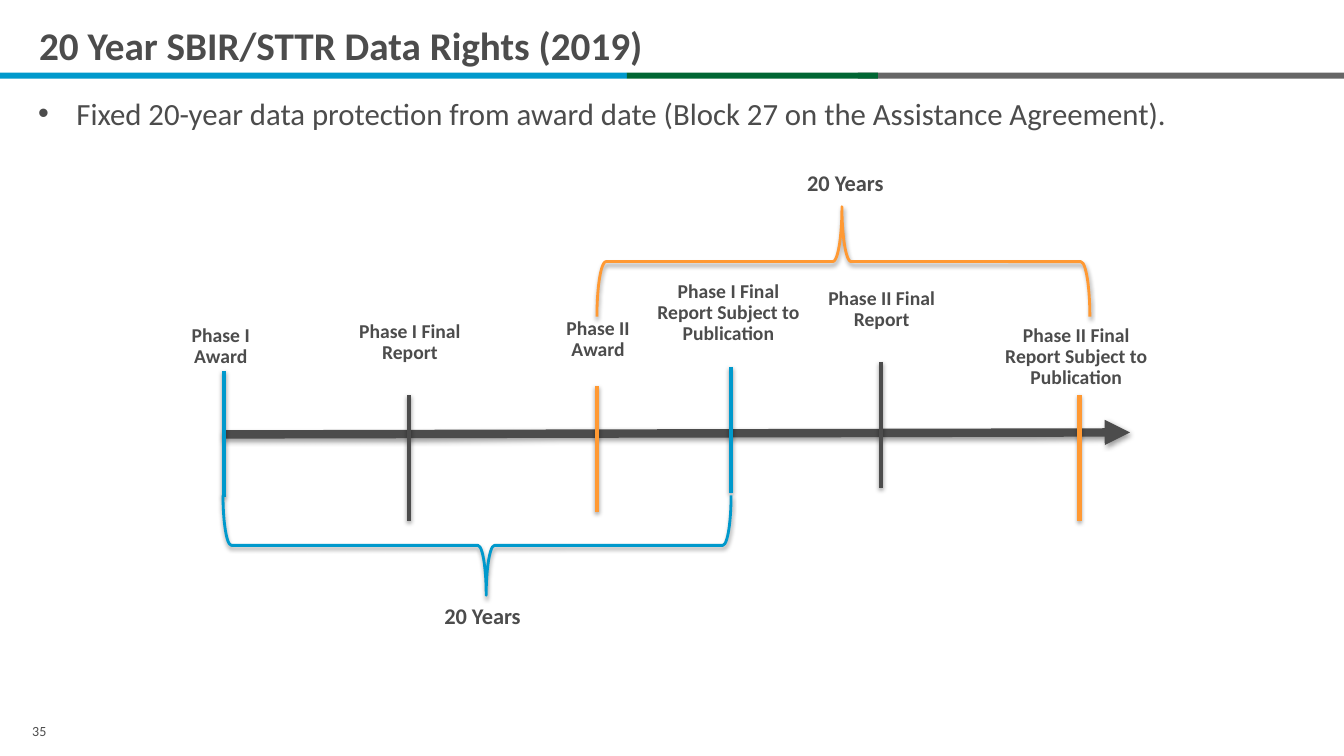
from lxml.etree import SubElement
from pptx import Presentation
from pptx.dml.color import RGBColor
from pptx.enum.shapes import MSO_CONNECTOR, MSO_SHAPE
from pptx.enum.text import MSO_ANCHOR, PP_ALIGN
from pptx.oxml import parse_xml
from pptx.oxml.ns import nsdecls, qn
from pptx.util import Inches, Pt

SLIDE_WIDTH, SLIDE_HEIGHT = Inches(13.33), Inches(7.5)
COLUMNS, ROWS = 40, 30
FONT = "Calibri"
BLUE = RGBColor(0x00, 0x99, 0xCC)
GREEN = RGBColor(0x00, 0x66, 0x33)
GRAY = RGBColor(0x66, 0x66, 0x66)
DARK = RGBColor(0x4C, 0x4C, 0x4C)
ORANGE = RGBColor(0xFF, 0x99, 0x33)

BANDS = [(0, 18.66, BLUE), (25.53, 14.47, GRAY), (18.66, 7.47, GREEN)]
BAND_TOP, BAND_HEIGHT = 2.88, 0.24
TICK_HEIGHT = 5
MILESTONES = [
    ("Phase I Award", 6.66, 14.72, BLUE, 6.57, 12.72, 2.82, 2.12),
    ("Phase I Final Report", 12.18, 15.68, DARK, 12.2, 12.56, 3.87, 2.12),
    ("Phase II Award", 17.76, 15.32, ORANGE, 17.8, 12.44, 3.87, 2.12),
    ("Phase I Final Report Subject to Publication", 21.75, 14.56, BLUE, 21.68, 10.96, 5.01, 2.96),
    ("Phase II Final Report", 26.22, 14.36, DARK, 26.24, 11.24, 3.87, 2.12),
    ("Phase II Final Report Subject to Publication", 32.13, 15.68, ORANGE, 32.03, 12.72, 5.01, 2.96),
]


def column(count):
    return round(SLIDE_WIDTH * count / COLUMNS)


def row(count):
    return round(SLIDE_HEIGHT * count / ROWS)


def add_shadow(shape):
    shape._element.spPr.append(parse_xml(
        f'<a:effectLst {nsdecls("a")}>'
        '<a:outerShdw blurRad="39370" dist="20320" dir="5400000" rotWithShape="0">'
        '<a:srgbClr val="000000"><a:alpha val="38000"/></a:srgbClr>'
        '</a:outerShdw></a:effectLst>'))


def add_text(slide, text, left, top, width, height, size, bold=False):
    text_box = slide.shapes.add_textbox(column(left), row(top), column(width), row(height))
    text_frame = text_box.text_frame
    text_frame.word_wrap = True
    text_frame.text = text
    font = text_frame.paragraphs[0].runs[0].font
    font.name, font.size, font.bold = FONT, Pt(size), bold
    font.color.rgb = DARK
    return text_frame


def add_label(slide, text, center, top, width, height, size, outline=DARK, bold=True):
    text_frame = add_text(slide, text, center - width / 2, top, width, height, size, bold)
    paragraph = text_frame.paragraphs[0]
    paragraph.alignment = PP_ALIGN.CENTER
    paragraph.line_spacing = 0.9
    if outline != DARK:
        properties = paragraph.runs[0].font._element
        properties.insert(0, parse_xml(
            f'<a:ln {nsdecls("a")} w="9525"><a:solidFill>'
            f'<a:srgbClr val="{outline}"/></a:solidFill></a:ln>'))


def add_bullet(slide, text, left, top, width, height, size):
    text_frame = add_text(slide, text, left, top, width, height, size)
    properties = text_frame.paragraphs[0]._element.get_or_add_pPr()
    indent = Inches(0.38)
    properties.set("marL", str(indent))
    properties.set("indent", str(-indent))
    SubElement(properties, qn("a:buFont"), typeface="Arial")
    SubElement(properties, qn("a:buChar"), char="•")


def add_band(slide, left, width, color):
    band = slide.shapes.add_shape(
        MSO_SHAPE.RECTANGLE, column(left), row(BAND_TOP), column(width), row(BAND_HEIGHT))
    band.shadow.inherit = False
    band.fill.solid()
    band.fill.fore_color.rgb = color
    band.line.fill.background()


def add_line(slide, start, end, color, weight, arrow=False):
    line = slide.shapes.add_connector(
        MSO_CONNECTOR.STRAIGHT, column(start[0]), row(start[1]), column(end[0]), row(end[1]))
    line.line.color.rgb = color
    line.line.width = Pt(weight)
    if arrow:
        SubElement(line.line._get_or_add_ln(), qn("a:tailEnd"), type="triangle")
    add_shadow(line)


def add_brace(slide, center, middle, span, depth, color, tip, upward=False):
    width, height = row(depth), column(span)
    brace = slide.shapes.add_shape(
        MSO_SHAPE.LEFT_BRACE, column(center) - width // 2, row(middle) - height // 2, width, height)
    brace.adjustments[0] = 0.083
    brace.adjustments[1] = tip
    brace.rotation = 270
    if upward:
        brace._element.spPr.xfrm.set("flipH", "1")
    brace.fill.background()
    brace.line.color.rgb = color
    brace.line.width = Pt(2)
    add_shadow(brace)


def add_milestone(slide, text, tick, tick_top, color, center, top, width, height):
    add_line(slide, (tick, tick_top), (tick, tick_top + TICK_HEIGHT), color, 3)
    add_label(slide, text, center, top, width, height, 14, color)


def main():
    presentation = Presentation()
    presentation.slide_width, presentation.slide_height = SLIDE_WIDTH, SLIDE_HEIGHT
    slide = presentation.slides.add_slide(presentation.slide_layouts[6])
    add_label(slide, "35", 1.17, 28.56, 1.98, 1.04, 10, bold=False)
    for band in BANDS:
        add_band(slide, *band)
    title = add_text(slide, "20 Year SBIR/STTR Data Rights (2019)", 0.87, 0, 38.16, 3.56, 28, True)
    title.vertical_anchor = MSO_ANCHOR.MIDDLE
    add_bullet(
        slide,
        "Fixed 20-year data protection from award date (Block 27 on the Assistance Agreement).",
        0.84, 3.56, 38.2, 24.2, 22)
    add_line(slide, (6.63, 17.24), (33.63, 17.16), DARK, 6, arrow=True)
    for milestone in MILESTONES:
        add_milestone(slide, *milestone)
    add_brace(slide, 14.2, 21.64, 15.12, 3.96, BLUE, 0.518)
    add_label(slide, "20 Years", 14.36, 23.8, 3.81, 1.36, 16, BLUE)
    add_brace(slide, 25.1, 10.38, 14.67, 4.36, ORANGE, 0.497, upward=True)
    add_label(slide, "20 Years", 25.16, 6.64, 3.81, 1.36, 16, ORANGE)
    presentation.save("out.pptx")


if __name__ == "__main__":
    main()
